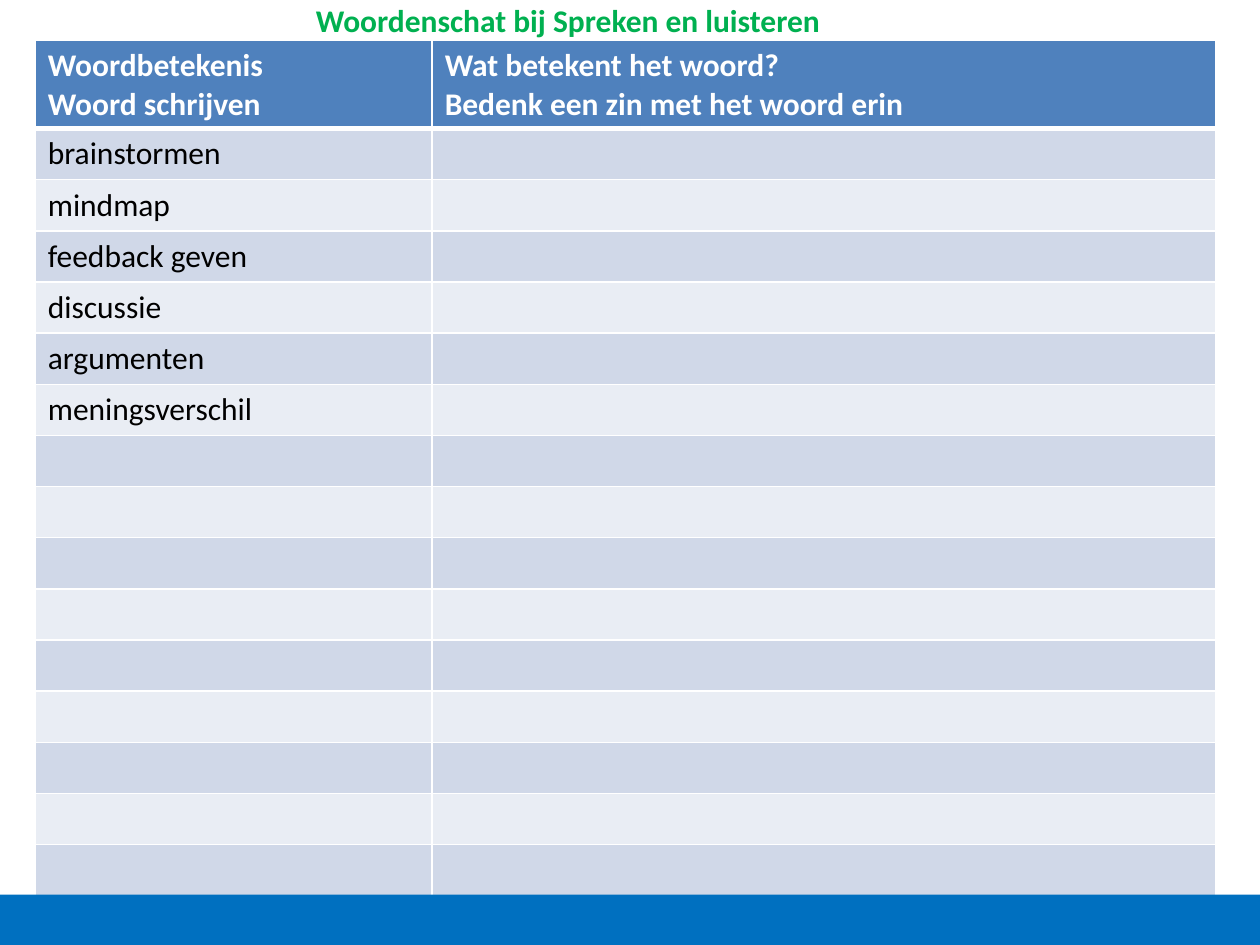
from dataclasses import dataclass

from lxml.etree import SubElement
from pptx import Presentation
from pptx.dml.color import RGBColor as Color
from pptx.enum.shapes import MSO_SHAPE as Shape
from pptx.enum.text import MSO_AUTO_SIZE as AutoSize
from pptx.oxml.ns import qn
from pptx.util import Inches, Pt


@dataclass(frozen=True)
class Theme:
    font: str = "Calibri"
    size: int = 18
    title: str = "00B050"
    header: str = "4F81BD"
    bands: tuple = ("D0D8E8", "E9EDF4")
    light: str = "FFFFFF"
    dark: str = "000000"
    footer: str = "0070C0"
    thin: int = 1
    thick: int = 3


THEME = Theme()
HEADINGS = [
    "Woordbetekenis\nWoord schrijven",
    "Wat betekent het woord?\nBedenk een zin met het woord erin",
]
WORDS = ["brainstormen", "mindmap", "feedback geven", "discussie",
         "argumenten", "meningsverschil"]
BODY_ROWS = 15
COLUMN_WIDTHS = [3.15, 6.22]
TABLE_HEIGHT = 6.78
HEADER_HEIGHT = 0.69


def write_text(text_frame, text, color, bold=False):
    text_frame.text = text
    for para in text_frame.paragraphs:
        para.font.size = Pt(THEME.size)
        for span in para.runs:
            span.font.name = THEME.font
            span.font.size = Pt(THEME.size)
            span.font.bold = bold
            span.font.color.rgb = Color.from_string(color)


def set_borders(cell, bottom):
    properties = cell._tc.get_or_add_tcPr()
    widths = {"a:lnL": THEME.thin, "a:lnR": THEME.thin,
              "a:lnT": THEME.thin, "a:lnB": bottom}
    # Border lines must come before the cell fill
    for position, (tag, width) in enumerate(widths.items()):
        line = SubElement(properties, qn(tag), w=str(Pt(width)))
        fill = SubElement(line, qn("a:solidFill"))
        SubElement(fill, qn("a:srgbClr"), val=THEME.light)
        properties.insert(position, line)


def style_cell(cell, fill, bottom=THEME.thin):
    cell.fill.solid()
    cell.fill.fore_color.rgb = Color.from_string(fill)
    set_borders(cell, bottom)


def add_title(page, text):
    box = page.shapes.add_textbox(Inches(2.41), Inches(-0.04), Inches(5.9), Inches(0.4))
    box.text_frame.word_wrap = True
    box.text_frame.auto_size = AutoSize.SHAPE_TO_FIT_TEXT
    write_text(box.text_frame, text, THEME.title, bold=True)


def add_word_table(page):
    table = page.shapes.add_table(
        BODY_ROWS + 1, len(COLUMN_WIDTHS), Inches(0.28), Inches(0.32),
        Inches(sum(COLUMN_WIDTHS)), Inches(TABLE_HEIGHT)).table
    for column, width in zip(table.columns, COLUMN_WIDTHS):
        column.width = Inches(width)
    for row in table.rows:
        row.height = Inches((TABLE_HEIGHT - HEADER_HEIGHT) / BODY_ROWS)
    table.rows[0].height = Inches(HEADER_HEIGHT)

    # Header row
    for cell, heading in zip(table.rows[0].cells, HEADINGS):
        write_text(cell.text_frame, heading, THEME.light, bold=True)
        style_cell(cell, THEME.header, THEME.thick)

    # Banded rows: known words first, then room to write
    for index in range(BODY_ROWS):
        word = WORDS[index] if index < len(WORDS) else ""
        for cell, text in zip(table.rows[index + 1].cells, (word, "")):
            write_text(cell.text_frame, text, THEME.dark)
            style_cell(cell, THEME.bands[index % 2])


def add_footer(page):
    bar = page.shapes.add_shape(Shape.RECTANGLE, 0, Inches(7.1), Inches(10), Inches(0.4))
    bar.shadow.inherit = False
    bar.fill.solid()
    bar.fill.fore_color.rgb = Color.from_string(THEME.footer)
    bar.line.fill.background()


def main():
    deck = Presentation()
    deck.slide_width, deck.slide_height = Inches(10), Inches(7.5)
    page = deck.slides.add_slide(deck.slide_layouts[6])
    add_title(page, "Woordenschat bij Spreken en luisteren")
    add_word_table(page)
    add_footer(page)
    deck.save("out.pptx")


if __name__ == "__main__":
    main()
